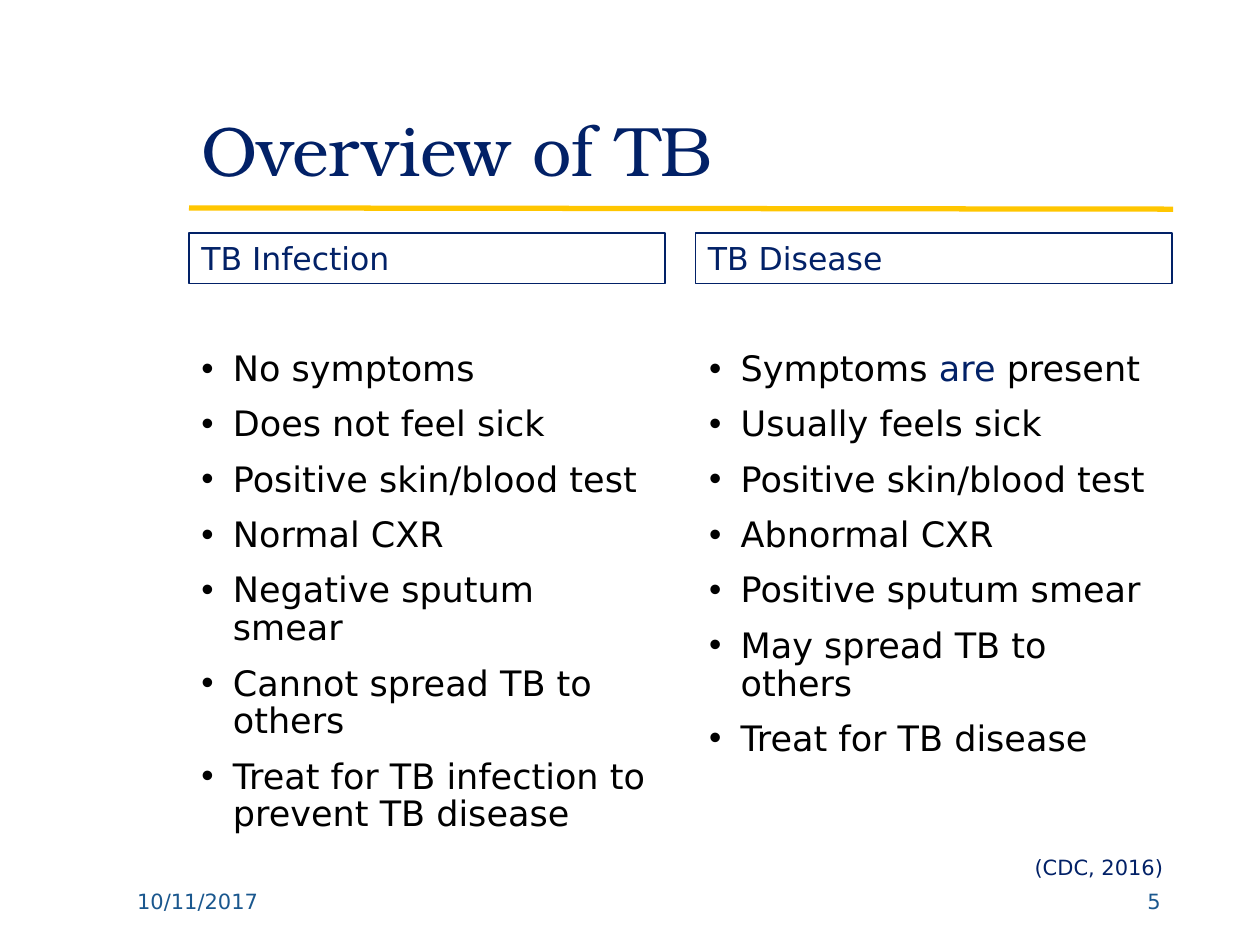
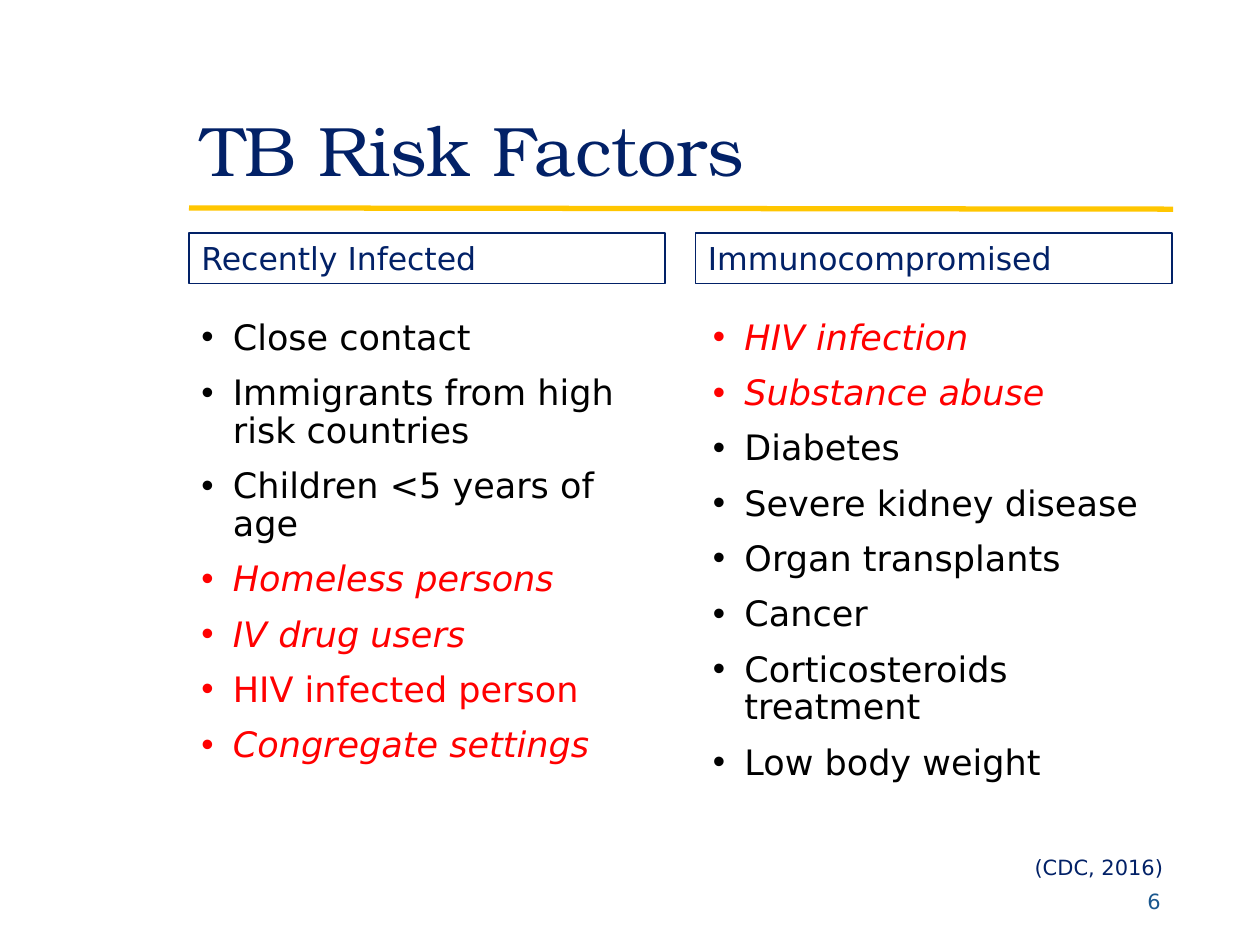
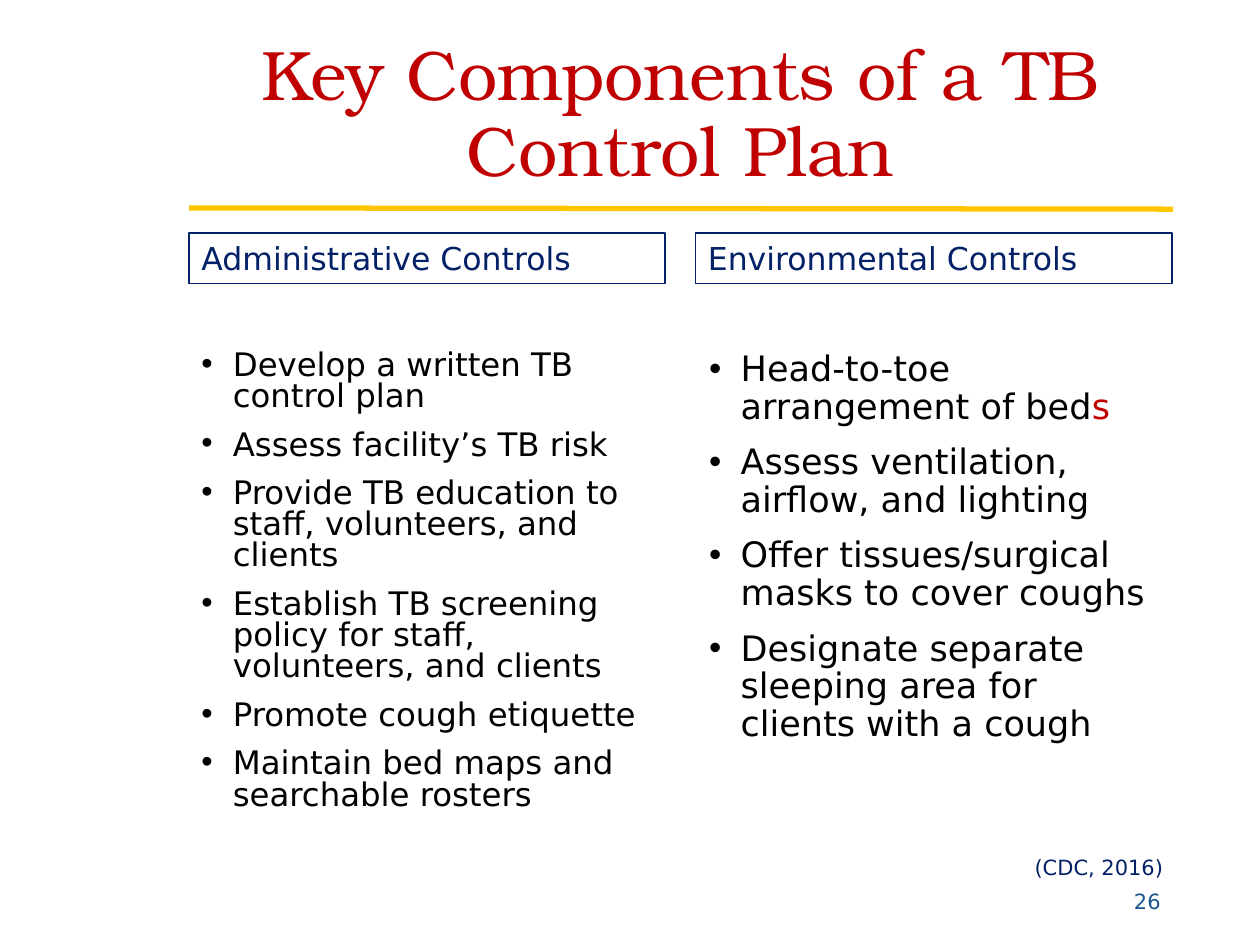
from pptx import Presentation
from pptx.dml.color import RGBColor
from pptx.enum.shapes import MSO_CONNECTOR, MSO_SHAPE
from pptx.enum.text import MSO_ANCHOR, MSO_AUTO_SIZE, PP_ALIGN
from pptx.oxml.ns import qn
from pptx.util import Inches, Pt
from lxml.etree import SubElement

NAVY = RGBColor(0x02, 0x21, 0x67)
BLUE = RGBColor(0x1A, 0x57, 0x8E)
GOLD = RGBColor(0xFF, 0xC6, 0x00)
RED = RGBColor(0xFF, 0x00, 0x00)
BRICK = RGBColor(0xC0, 0x00, 0x00)
BLACK = RGBColor(0x00, 0x00, 0x00)
WHITE = RGBColor(0xFF, 0xFF, 0xFF)

SANS = "DejaVu Sans"
SERIF = "TeX Gyre Bonum"
LEFT = 1.5
WIDE = 3.78


def style(para, size, color, name=SANS, italic=False):
    font = para.font
    font.name = name
    font.size = Pt(size)
    font.color.rgb = color
    font.italic = italic


def add_box(slide, left, top, width, height):
    frame = slide.shapes.add_textbox(
        Inches(left), Inches(top), Inches(width), Inches(height)).text_frame
    frame.word_wrap = True
    return frame


def add_label(slide, text, place, size, color, name=SANS,
              align=PP_ALIGN.LEFT, anchor=MSO_ANCHOR.MIDDLE, pitch=None):
    frame = add_box(slide, *place)
    frame.vertical_anchor = anchor
    para = frame.paragraphs[0]
    para.text = text
    para.alignment = align
    para.line_spacing = pitch
    style(para, size, color, name)


def add_rule(slide):
    rule = slide.shapes.add_connector(
        MSO_CONNECTOR.STRAIGHT, Inches(LEFT), Inches(1.65), Inches(9.31), Inches(1.66))
    rule.line.color.rgb = GOLD
    rule.line.width = Pt(3)
    SubElement(rule._element.spPr, qn("a:effectLst"))


def add_head(slide, text, left):
    head = slide.shapes.add_shape(
        MSO_SHAPE.RECTANGLE, Inches(left), Inches(1.85), Inches(WIDE), Inches(0.4))
    head.shadow.inherit = False
    head.fill.solid()
    head.fill.fore_color.rgb = WHITE
    head.line.color.rgb = NAVY
    head.line.width = Pt(1)
    frame = head.text_frame
    frame.word_wrap = True
    frame.auto_size = MSO_AUTO_SIZE.SHAPE_TO_FIT_TEXT
    frame.vertical_anchor = MSO_ANCHOR.TOP
    para = frame.paragraphs[0]
    para.text = text
    para.alignment = PP_ALIGN.LEFT
    style(para, 18, NAVY)


def add_bullet(para):
    props = para._p.get_or_add_pPr()
    props.set("marL", str(Inches(0.25)))
    props.set("indent", str(-Inches(0.25)))
    SubElement(props, qn("a:buFont"), typeface="Arial")
    SubElement(props, qn("a:buChar"), char="•")


def add_list(slide, items, left, top, size=20, pitch=0.9):
    frame = add_box(slide, left, top, WIDE, 4.03)
    for index, item in enumerate(items):
        para = frame.add_paragraph() if index else frame.paragraphs[0]
        para.line_spacing = pitch
        para.space_before = Pt(10 if index else 0)
        add_bullet(para)
        if isinstance(item, list):
            style(para, size, BLACK)
            for text, color in item:
                run = para.add_run()
                run.text = text
                run.font.color.rgb = color
        else:
            text, color, italic = item if isinstance(item, tuple) else (item, BLACK, False)
            para.text = text
            style(para, size, color, italic=italic)


def add_page(deck, title, number, heads, color=NAVY, align=PP_ALIGN.LEFT):
    slide = deck.slides.add_slide(deck.slide_layouts[6])
    add_rule(slide)
    add_label(slide, title, (LEFT, 0.12, 7.8, 1.45), 40, color, SERIF,
              align, MSO_ANCHOR.BOTTOM, 0.9)
    for text, left in zip(heads, (LEFT, 5.52)):
        add_head(slide, text, left)
    add_label(slide, "(CDC, 2016)", (5.01, 6.73, 4.32, 0.3), 12, NAVY,
              align=PP_ALIGN.RIGHT, anchor=MSO_ANCHOR.TOP)
    add_label(slide, number, (8, 6.95, 1.31, 0.4), 12, BLUE, align=PP_ALIGN.RIGHT)
    return slide


def add_overview(deck):
    slide = add_page(deck, "Overview of TB", "5", ("TB Infection", "TB Disease"))
    add_list(slide, [
        "No symptoms",
        "Does not feel sick",
        "Positive skin/blood test",
        "Normal CXR",
        "Negative sputum smear",
        "Cannot spread TB to others",
        "Treat for TB infection to prevent TB disease",
    ], LEFT, 2.74)
    add_list(slide, [
        [("Symptoms ", BLACK), ("are ", NAVY), ("present", BLACK)],
        "Usually feels sick",
        "Positive skin/blood test",
        "Abnormal CXR",
        "Positive sputum smear",
        "May spread TB to others",
        "Treat for TB disease",
    ], 5.53, 2.74)
    add_label(slide, "10/11/2017", (0.99, 6.95, 1.39, 0.4), 12, BLUE)


def add_risks(deck):
    slide = add_page(deck, "TB Risk Factors", "6", ("Recently Infected", "Immunocompromised"))
    add_list(slide, [
        "Close contact",
        "Immigrants from high risk countries",
        "Children <5 years of age",
        ("Homeless persons", RED, True),
        ("IV drug users", RED, True),
        ("HIV infected person", RED, False),
        ("Congregate settings", RED, True),
    ], LEFT, 2.49)
    add_list(slide, [
        ("HIV infection", RED, True),
        ("Substance abuse", RED, True),
        "Diabetes",
        "Severe kidney disease",
        "Organ transplants",
        "Cancer",
        "Corticosteroids treatment",
        "Low body weight",
    ], 5.56, 2.49)


def add_plan(deck):
    slide = add_page(deck, "Key Components of a TB Control Plan", "26",
                     ("Administrative Controls", "Environmental Controls"),
                     BRICK, PP_ALIGN.CENTER)
    add_list(slide, [
        "Develop a written TB control plan",
        "Assess facility’s TB risk",
        "Provide TB education to staff, volunteers, and clients",
        "Establish TB screening policy for staff, volunteers, and clients",
        "Promote cough etiquette",
        "Maintain bed maps and searchable rosters",
    ], LEFT, 2.74, 18.5, 0.8)
    add_list(slide, [
        [("Head-to-toe arrangement of bed", BLACK), ("s", BRICK)],
        "Assess ventilation, airflow, and lighting",
        "Offer tissues/surgical masks to cover coughs",
        "Designate separate sleeping area for clients with a cough",
    ], 5.53, 2.74)


def main():
    deck = Presentation()
    deck.slide_width = Inches(10)
    deck.slide_height = Inches(7.5)
    add_overview(deck)
    add_risks(deck)
    add_plan(deck)
    deck.save("out.pptx")


if __name__ == "__main__":
    main()
